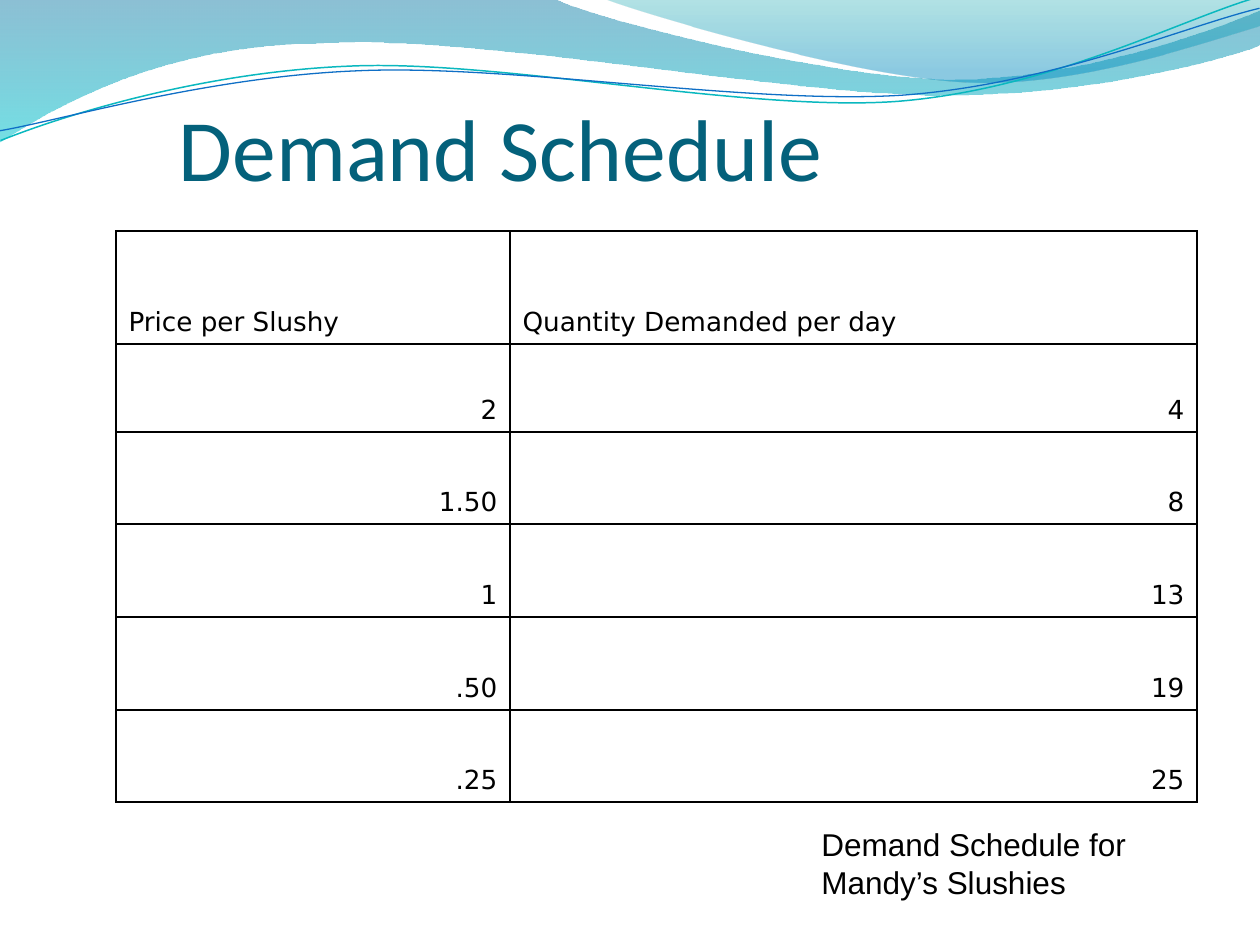
"""Build the demand schedule slide with its wave header, table and caption."""
from lxml.etree import SubElement
from pptx import Presentation
from pptx.dml.color import RGBColor
from pptx.enum.text import MSO_ANCHOR, MSO_AUTO_SIZE, PP_ALIGN
from pptx.oxml.ns import qn
from pptx.util import Pt

PX = 914400 / 126

TITLE = "Demand Schedule"
CAPTION = "Demand Schedule for Mandy’s Slushies"
SCHEDULE = [
    ("Price per Slushy", "Quantity Demanded per day"),
    ("2", "4"),
    ("1.50", "8"),
    ("1", "13"),
    (".50", "19"),
    (".25", "25"),
]
COLUMN_WIDTHS = [394, 687]
ROW_HEIGHTS = [113, 88, 92, 93, 93, 92]
HANGING = 48

BANDS = [
    ((0, -1),
     [(554, -1), (600, 21, 837, 79, 955, 79), (1075, 79, 1207, 33, 1260, 11),
      (1261, 45), (1239, 55, 1096, 96, 940, 95), (784, 95, 481, 35, 324, 43),
      (163, 44, 58, 105, -1, 142)],
     [(0, "0074A1", 45), (1, "00C6CF", 55)]),
    ((604, -1),
     [(641, 14, 859, 78, 969, 82), (1079, 87, 1211, 40, 1260, 26), (1260, 0)],
     [(0, "00A1A9", 30), (0.8, "008BBF", 45)]),
]
STRAND_ROTATION = 357.3
STRANDS = [
    ((-2, 111),
     [(58, 90, 199, 52, 350, 53), (499, 53, 745, 118, 896, 114),
      (1049, 109, 1184, 45, 1260, 27)],
     "0AB8BF", 0.85),
    ((-2, 101),
     [(57, 94, 207, 57, 357, 58), (509, 58, 750, 111, 902, 108),
      (1052, 104, 1188, 52, 1262, 38)],
     "0F6FC6", 0.75),
]


def px(length):
    return round(length * PX)


def color(hex_value):
    return RGBColor.from_string(hex_value)


def add_wave(slide, start, segments, close):
    builder = slide.shapes.build_freeform(px(start[0]), px(start[1]), scale=1.0)
    for segment in segments:
        points = zip(segment[::2], segment[1::2])
        builder.add_line_segments([(px(x), px(y)) for x, y in points], close=False)
    if close:
        builder.add_line_segments([], close=True)
    wave = builder.convert_to_shape()
    wave.shadow.inherit = False
    steps = iter(list(wave.element.spPr.iter(qn("a:lnTo"))))
    for segment in segments:
        knots = [next(steps) for _ in segment[::2]]
        if len(knots) == 3:
            curve = knots[0].makeelement(qn("a:cubicBezTo"))
            knots[0].addprevious(curve)
            for knot in knots:
                curve.append(knot[0])
                knot.getparent().remove(knot)
    return wave


def add_band(slide, start, segments, stops):
    band = add_wave(slide, start, segments, True)
    band.line.fill.background()
    band.fill.gradient()
    band.fill.gradient_angle = 270
    for stop, (position, hex_value, _) in zip(band.fill.gradient_stops, stops):
        stop.position = position
        stop.color.rgb = color(hex_value)
    shades = list(band.element.spPr.iter(qn("a:srgbClr")))
    for shade, (_, _, opacity) in zip(shades, stops):
        SubElement(shade, qn("a:alpha"), val=str(opacity * 1000))


def add_strand(slide, start, segments, hex_value, width):
    strand = add_wave(slide, start, segments, False)
    strand.rotation = STRAND_ROTATION
    strand.fill.background()
    strand.line.color.rgb = color(hex_value)
    strand.line.width = Pt(width)


def style(paragraph, font_name, size, hex_value):
    font = paragraph.runs[0].font
    font.name, font.size = font_name, Pt(size)
    font.color.rgb = color(hex_value)


def add_text(slide, text, box, font_name, size, hex_value):
    frame = slide.shapes.add_textbox(*map(px, box)).text_frame
    frame.word_wrap = True
    frame.text = text
    style(frame.paragraphs[0], font_name, size, hex_value)
    return frame


def add_borders(cell):
    properties = cell._tc.get_or_add_tcPr()
    for side in ("lnL", "lnR", "lnT", "lnB"):
        border = SubElement(properties, qn(f"a:{side}"), w=str(Pt(1)))
        SubElement(SubElement(border, qn("a:solidFill")), qn("a:srgbClr"), val="000000")


def add_schedule(slide, left, top):
    table = slide.shapes.add_table(
        len(SCHEDULE), len(COLUMN_WIDTHS), px(left), px(top),
        px(sum(COLUMN_WIDTHS)), px(sum(ROW_HEIGHTS))).table
    table.first_row = table.horz_banding = False
    for column, width in zip(table.columns, COLUMN_WIDTHS):
        column.width = px(width)
    for r, (row, height) in enumerate(zip(SCHEDULE, ROW_HEIGHTS)):
        table.rows[r].height = px(height)
        for c, text in enumerate(row):
            cell = table.cell(r, c)
            cell.text = text
            cell.vertical_anchor = MSO_ANCHOR.BOTTOM
            add_borders(cell)
            cell.fill.background()
            paragraph = cell.text_frame.paragraphs[0]
            paragraph.alignment = PP_ALIGN.RIGHT if r else PP_ALIGN.LEFT
            indents = paragraph._p.get_or_add_pPr()
            indents.set("marL", str(px(HANGING)))
            indents.set("indent", str(-px(HANGING)))
            style(paragraph, "DejaVu Sans", 15, "000000")


def main():
    presentation = Presentation()
    presentation.slide_width, presentation.slide_height = px(1260), px(945)
    slide = presentation.slides.add_slide(presentation.slide_layouts[6])
    for band in BANDS:
        add_band(slide, *band)
    for strand in STRANDS:
        add_strand(slide, *strand)
    title = add_text(slide, TITLE, (179, 42, 1008, 157), "Calibri", 50, "04617B")
    title.vertical_anchor = MSO_ANCHOR.BOTTOM
    title.margin_left = title.margin_right = title.margin_bottom = 0
    add_schedule(slide, 116, 231)
    caption = add_text(slide, CAPTION, (809, 819, 336, 88), "Arial", 18, "000000")
    caption.auto_size = MSO_AUTO_SIZE.SHAPE_TO_FIT_TEXT
    presentation.save("out.pptx")


if __name__ == "__main__":
    main()
